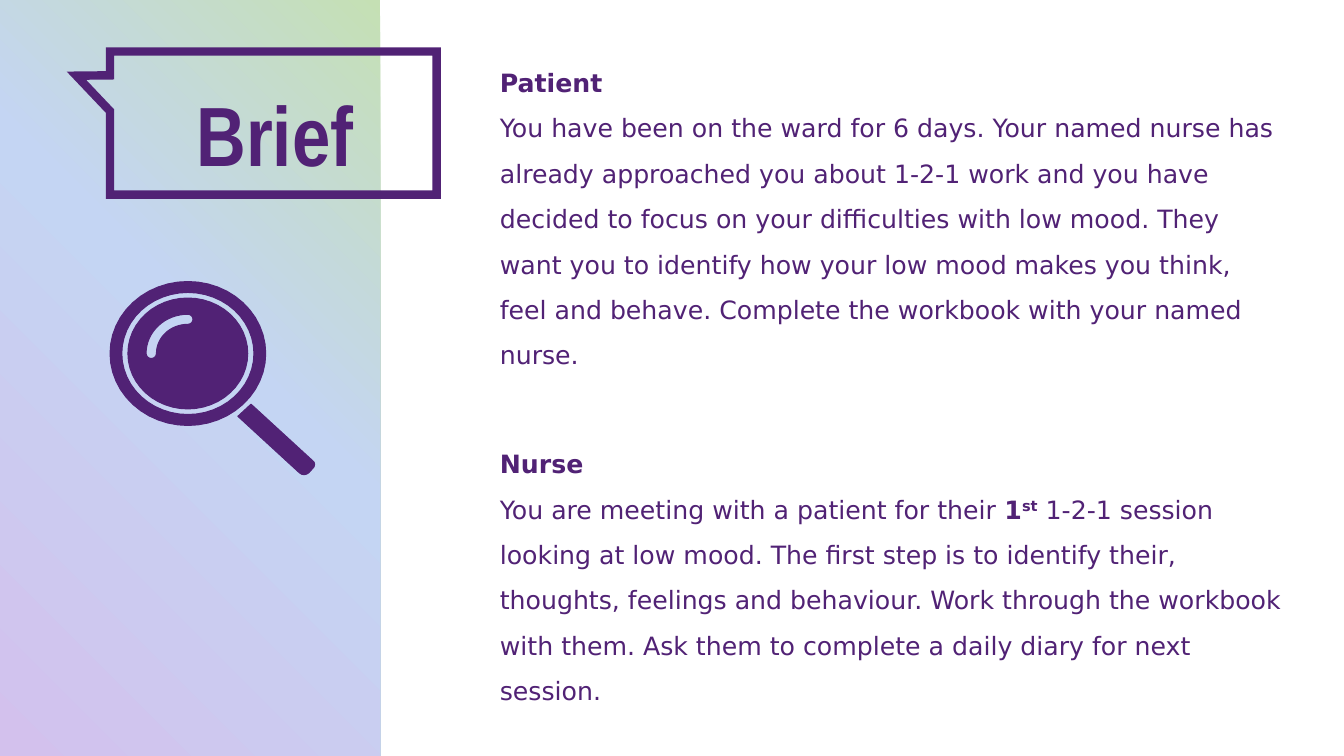
import math
from dataclasses import dataclass

from lxml import etree
from pptx import Presentation
from pptx.dml.color import RGBColor
from pptx.enum.shapes import MSO_SHAPE
from pptx.enum.text import MSO_ANCHOR, MSO_AUTO_SIZE, PP_ALIGN
from pptx.oxml import parse_xml
from pptx.oxml.ns import nsdecls, qn
from pptx.util import Pt

RECTANGLE = MSO_SHAPE.RECTANGLE
CALLOUT = MSO_SHAPE.RECTANGULAR_CALLOUT
TOP = MSO_ANCHOR.TOP
FIT_SHAPE = MSO_AUTO_SIZE.SHAPE_TO_FIT_TEXT
LEFT = PP_ALIGN.LEFT
TITLE_ONLY = 5


@dataclass(frozen=True)
class Theme:
    purple: RGBColor = RGBColor(0x51, 0x22, 0x75)
    gradient: tuple = ((0, "D3C1ED"), (56, "C4D5F3"), (100, "C5E0B4"))
    title_font: str = "Arial Narrow"
    body_font: str = "DejaVu Sans"
    title_size: float = 60
    body_size: float = 18


PATIENT = [
    [("Patient", {"bold": True})],
    [("You have been on the ward for 6 days. Your named nurse has already "
      "approached you about 1-2-1 work and you have decided to focus on your "
      "difficulties with low mood. They want you to identify how your low mood "
      "makes you think, feel and behave. Complete the workbook with your named "
      "nurse.", {})],
]
NURSE = [
    [("Nurse", {"bold": True})],
    [("You are meeting with a patient for their ", {}),
     ("1", {"bold": True}),
     ("st", {"bold": True, "raised": True}),
     (" 1-2-1 session looking at low mood. The first step is to identify their, "
      "thoughts, feelings and behaviour. Work through the workbook with them. "
      "Ask them to complete a daily diary for next session.", {})],
]


def arc(centre, radii, start, end, steps=48):
    """Points along an elliptical arc, angles in degrees, clockwise from the right."""
    angles = [math.radians(start + (end - start) * i / steps) for i in range(steps + 1)]
    return [(centre[0] + radii[0] * math.cos(a), centre[1] + radii[1] * math.sin(a))
            for a in angles]


def set_all(target, values):
    for name, value in values.items():
        setattr(target, name, value)


class SlideBuilder:
    def __init__(self, page, theme):
        self.page = page
        self.theme = theme

    def shape(self, kind, left, top, width, height):
        box = self.page.shapes.add_shape(kind, Pt(left), Pt(top), Pt(width), Pt(height))
        box.shadow.inherit = False
        return box

    def gradient_panel(self, *place):
        panel = self.shape(RECTANGLE, *place)
        panel.line.fill.background()
        stops = "".join(f'<a:gs pos="{at * 1000}"><a:srgbClr val="{colour}"/></a:gs>'
                        for at, colour in self.theme.gradient)
        fill = parse_xml(
            f'<a:gradFill {nsdecls("a")} rotWithShape="1"><a:gsLst>{stops}</a:gsLst>'
            '<a:path path="circle"><a:fillToRect t="100000" r="100000"/></a:path>'
            '</a:gradFill>')
        panel._element.spPr.find(qn("a:prstGeom")).addnext(fill)

    def callout(self, *place, tip, weight):
        bubble = self.shape(CALLOUT, *place)
        bubble.fill.background()
        bubble.adjustments[0], bubble.adjustments[1] = tip
        bubble.line.color.rgb = self.theme.purple
        bubble.line.width = Pt(weight)
        outline = bubble._element.spPr.find(qn("a:ln"))
        etree.SubElement(outline, qn("a:miter")).set("lim", "800000")

    def fill_text(self, box, paragraphs, font, size, spacing):
        frame = box.text_frame
        set_all(frame, {"word_wrap": True, "auto_size": FIT_SHAPE,
                        "vertical_anchor": TOP})
        for index, spans in enumerate(paragraphs):
            para = frame.add_paragraph() if index else frame.paragraphs[0]
            set_all(para, {"alignment": LEFT, "line_spacing": spacing})
            for text, style in spans:
                span = para.add_run()
                span.text = text
                set_all(span.font, {"name": font, "size": Pt(size),
                                    "bold": style.get("bold", False)})
                span.font.color.rgb = self.theme.purple
                if style.get("raised"):
                    span._r.get_or_add_rPr().set("baseline", "30000")

    def title(self, text, left, top, width, height, indent):
        box = self.page.shapes.title
        self.page.shapes._spTree.append(box._element)  # in front of the panel
        set_all(box, {"left": Pt(left), "top": Pt(top),
                      "width": Pt(width), "height": Pt(height)})
        box.text_frame.margin_left = Pt(indent)
        self.fill_text(box, [[(text, {"bold": True})]],
                       self.theme.title_font, self.theme.title_size, 1.2)

    def text(self, paragraphs, left, top, width, height):
        box = self.page.shapes.add_textbox(Pt(left), Pt(top), Pt(width), Pt(height))
        self.fill_text(box, paragraphs, self.theme.body_font, self.theme.body_size, 1.5)

    def outline(self, group, *contours):
        """Filled shape; a second contour cuts a hole in the first."""
        contours = [[(Pt(x), Pt(y)) for x, y in contour] for contour in contours]
        pen = group.shapes.build_freeform(*contours[0][0], scale=1.0)
        pen.add_line_segments(contours[0][1:], close=True)
        for contour in contours[1:]:
            pen.move_to(*contour[0])
            pen.add_line_segments(contour[1:], close=True)
        part = pen.convert_to_shape()
        part.shadow.inherit = False
        part.fill.solid()
        part.fill.fore_color.rgb = self.theme.purple
        part.line.color.rgb = self.theme.purple
        part.line.width = Pt(0.75)

    def magnifier(self, centre):
        x, y = centre
        group = self.page.shapes.add_group_shape()
        # Rim
        self.outline(group, arc(centre, (55.6, 51.4), 0, 360),
                     arc(centre, (47.2, 43.6), 360, 0))
        # Lens with a round-ended highlight
        outer, inner, cap = (29.8, 28), (22.4, 20.8), (3.7, 3.6)
        highlight = (arc(centre, outer, 180, 270, 16)
                     + arc((x, y - 24.4), cap, -90, 90, 8)
                     + arc(centre, inner, 270, 180, 16)
                     + arc((x - 26.1, y), cap, 0, 180, 8))
        self.outline(group, arc(centre, (42.8, 39.6), 0, 360), highlight)
        # Handle
        self.outline(group, [(179.3, 288.7), (169.9, 297.4), (213.8, 337.7),
                             (215.5, 338.8), (217.4, 339.1), (219.2, 338.6),
                             (220.6, 337.7), (223.2, 334.8), (224.4, 333.4),
                             (224.7, 331.6), (224.4, 330.2), (223.2, 329)])


def main():
    deck = Presentation()
    deck.slide_width, deck.slide_height = Pt(960), Pt(540)
    page = deck.slides.add_slide(deck.slide_layouts[TITLE_ONLY])
    builder = SlideBuilder(page, Theme())

    # Side panel with the heading
    builder.gradient_panel(0, 0, 271.6, 540)
    builder.callout(78.6, 36.8, 233.3, 102.2, tip=(-0.603, -0.331), weight=6)
    builder.title("Brief", 119.5, 41, 155.5, 94.3, indent=20.9)
    builder.magnifier((134.2, 252.5))

    # Role descriptions
    builder.text(PATIENT, 350, 33.8, 573, 236.2)
    builder.text(NURSE, 350, 306, 573, 203.8)

    deck.save("out.pptx")


if __name__ == "__main__":
    main()
